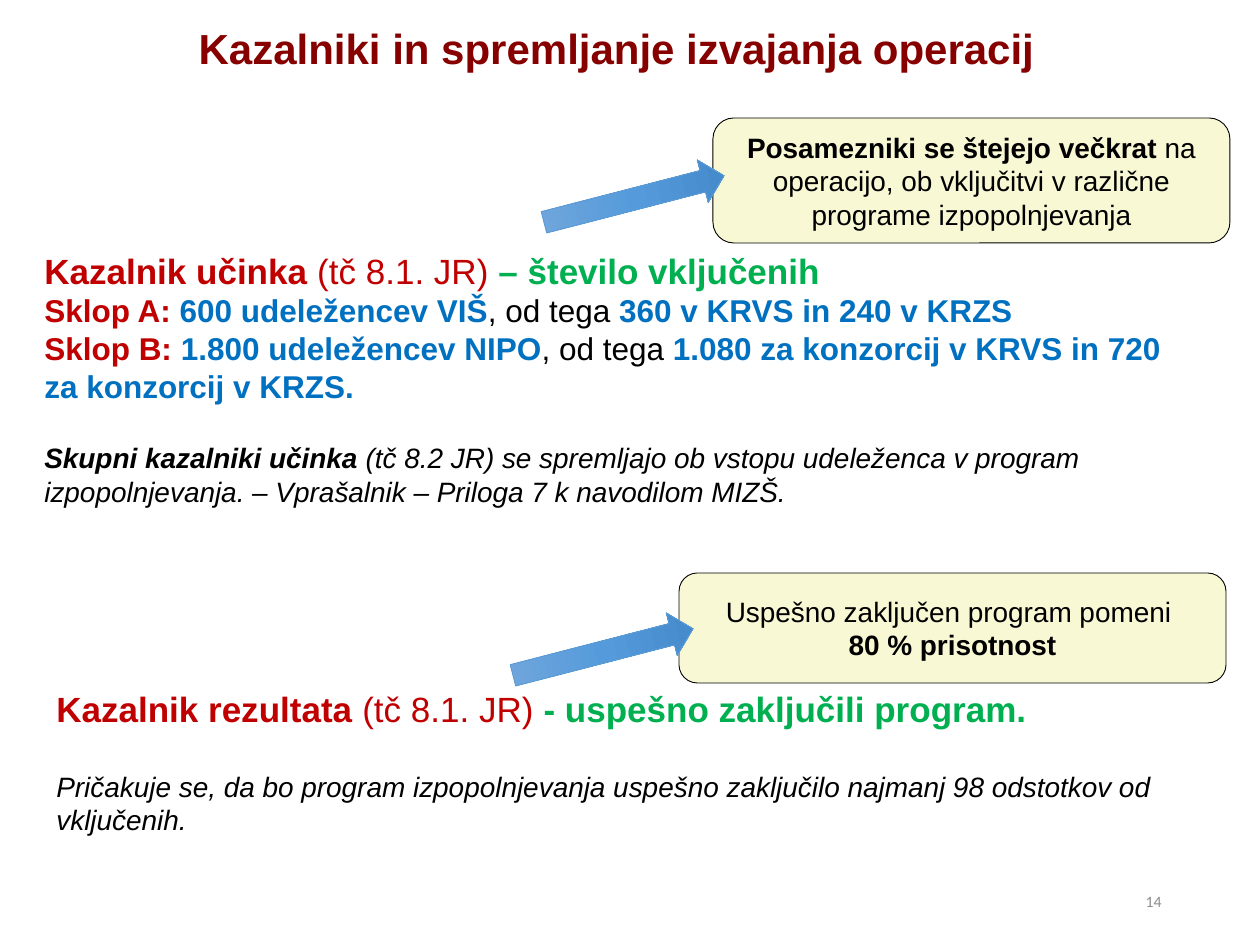
import pptx
import pptx.dml.color
import pptx.enum.shapes
import pptx.enum.text
import pptx.oxml
import pptx.oxml.ns
import pptx.util

EMU_PER_PX = 914400 / 126
ALIGN = pptx.enum.text.PP_ALIGN
ANCHOR = pptx.enum.text.MSO_ANCHOR
SHAPE = pptx.enum.shapes.MSO_SHAPE

BLACK = "000000"
MAROON = "860000"
RED = "C00000"
GREEN = "00B050"
BLUE = "0070C0"
GREY = "8C8C8C"
CREAM = "F8F8D4"
ARROW_LINE = "5B9BD5"
ARROW_STOPS = ((0, "71A6DB"), (50, "559BDB"), (100, "448ACA"))


def px(length):
    return pptx.util.Emu(round(length * EMU_PER_PX))


def box(*lengths):
    return [px(length) for length in lengths]


def color(value):
    return pptx.dml.color.RGBColor.from_string(value)


def add_run(paragraph, text, size, ink=BLACK, style="", font="Arial"):
    run = paragraph.add_run()
    run.text = text
    run.font.name = font
    run.font.size = pptx.util.Pt(size)
    run.font.bold = "b" in style
    run.font.italic = "i" in style
    run.font.color.rgb = color(ink)


def fill_text(shape, paragraphs, align=ALIGN.LEFT, anchor=ANCHOR.TOP):
    frame = shape.text_frame
    frame.word_wrap = True
    frame.vertical_anchor = anchor
    for index, (space_before, runs) in enumerate(paragraphs):
        paragraph = frame.add_paragraph() if index else frame.paragraphs[0]
        paragraph.alignment = align
        if space_before:
            paragraph.space_before = pptx.util.Pt(space_before)
        for run in runs:
            add_run(paragraph, *run)


def add_text(slide, bounds, paragraphs, align=ALIGN.LEFT, anchor=ANCHOR.TOP):
    shape = slide.shapes.add_textbox(*box(*bounds))
    fill_text(shape, paragraphs, align, anchor)
    return shape


def add_preset(slide, preset, bounds, line):
    shape = slide.shapes.add_shape(preset, *box(*bounds))
    shape.shadow.inherit = False
    shape.line.color.rgb = color(line)
    shape.line.width = pptx.util.Pt(0.5)
    return shape


def add_callout(slide, bounds, paragraphs):
    shape = add_preset(slide, SHAPE.ROUNDED_RECTANGLE, bounds, BLACK)
    shape.fill.solid()
    shape.fill.fore_color.rgb = color(CREAM)
    fill_text(shape, paragraphs, ALIGN.CENTER, ANCHOR.MIDDLE)


def add_arrow(slide, left, top):
    shape = add_preset(slide, SHAPE.DOWN_ARROW, (left, top, 44, 186), ARROW_LINE)
    shape.rotation = 255.5
    shape.fill.gradient()
    shape.fill.gradient_angle = 270
    stops = shape._element.spPr.find(".//" + pptx.oxml.ns.qn("a:gsLst"))
    for stop in list(stops):
        stops.remove(stop)
    for position, value in ARROW_STOPS:
        stops.append(pptx.oxml.parse_xml(
            f'<a:gs {pptx.oxml.ns.nsdecls("a")} pos="{position * 1000}">'
            f'<a:srgbClr val="{value}"/></a:gs>'))


def add_title(slide, text):
    title = add_text(slide, (44, 23, 1145, 74),
                     [(0, [(text, 24, MAROON, "b")])], ALIGN.CENTER)
    frame = title.text_frame
    frame.margin_left = frame.margin_top = 0
    frame.margin_right = frame.margin_bottom = 0


def main():
    presentation = pptx.Presentation()
    presentation.slide_width, presentation.slide_height = box(1260, 945)
    slide = presentation.slides.add_slide(presentation.slide_layouts[6])

    add_text(slide, (44, 681, 1182, 179), [
        (0, [("Kazalnik rezultata", 20, RED, "b"),
             (" (tč 8.1. JR) ", 20, RED),
             ("- uspešno zaključili program.", 20, GREEN, "b")]),
        (23, [("Pričakuje se, da bo program izpopolnjevanja uspešno zaključilo "
               "najmanj 98 odstotkov od vključenih.", 16, BLACK, "i")]),
    ])
    add_callout(slide, (679, 573, 547, 110), [
        (0, [("Uspešno zaključen program pomeni ", 16)]),
        (0, [("80 % prisotnost", 16, BLACK, "b")]),
    ])
    add_text(slide, (32, 243, 1145, 285), [
        (0, [("Kazalnik učinka ", 20, RED, "b"),
             ("(tč 8.1. JR) ", 20, RED),
             ("– število vključenih", 20, GREEN, "b")]),
        (0, [("Sklop A: ", 18, RED, "b"),
             ("600 udeležencev VIŠ", 18, BLUE, "b"),
             (", od tega ", 18),
             ("360 v KRVS in 240 v KRZS", 18, BLUE, "b")]),
        (0, [("Sklop B: ", 18, RED, "b"),
             ("1.800 udeležencev NIPO", 18, BLUE, "b"),
             (", od tega ", 18),
             ("1.080 za konzorcij v KRVS in 720 za konzorcij v KRZS.",
              18, BLUE, "b")]),
        (20.7, [("Skupni kazalniki učinka ", 16, BLACK, "bi"),
                ("(tč 8.2 JR) se spremljajo ob vstopu udeleženca v program "
                 "izpopolnjevanja. – Vprašalnik – Priloga 7 k navodilom MIZŠ.",
                 16, BLACK, "i")]),
    ])
    add_callout(slide, (713, 118, 517, 125), [
        (0, [("Posamezniki se štejejo večkrat ", 16, BLACK, "b"),
             ("na operacijo, ob vključitvi v različne programe "
              "izpopolnjevanja", 16)]),
    ])
    add_title(slide, "Kazalniki in spremljanje izvajanja operacij")
    for left, top in ((612, 106), (581, 559)):
        add_arrow(slide, left, top)
    add_text(slide, (890, 876, 284, 50), [(0, [("14", 9, GREY, "", "Calibri")])],
             ALIGN.RIGHT, ANCHOR.MIDDLE)

    presentation.save("out.pptx")


if __name__ == "__main__":
    main()
